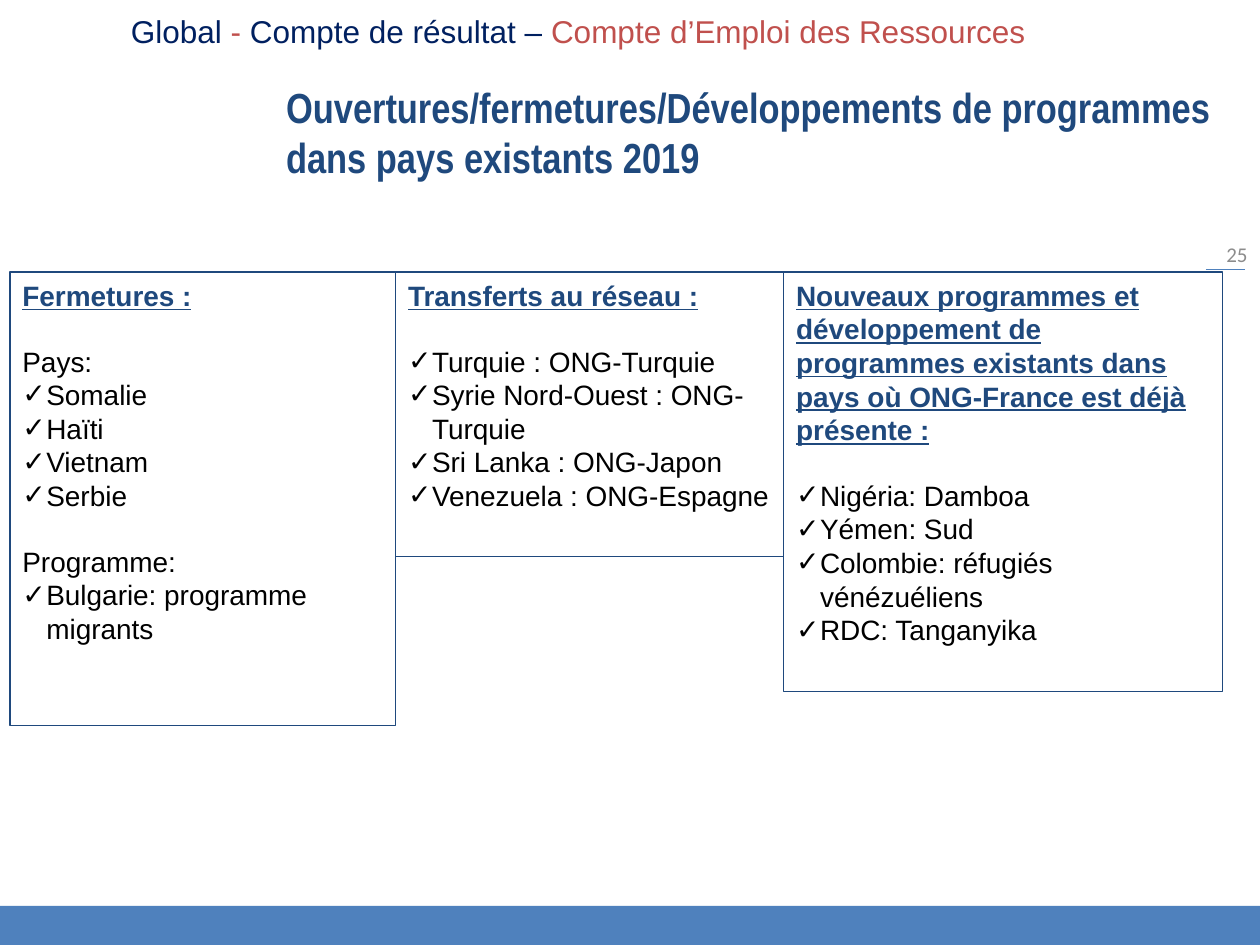
from lxml import etree
from pptx import Presentation
from pptx.dml.color import RGBColor
from pptx.enum.shapes import MSO_CONNECTOR, MSO_SHAPE
from pptx.enum.text import MSO_ANCHOR, MSO_AUTO_SIZE, PP_ALIGN
from pptx.oxml.ns import qn
from pptx.util import Inches, Pt

LEFT, RIGHT = PP_ALIGN.LEFT, PP_ALIGN.RIGHT
TOP, MIDDLE = MSO_ANCHOR.TOP, MSO_ANCHOR.MIDDLE
NAVY, BLUE, DARK, RED = "1F497D", "4F81BD", "002060", "C0504D"
BLACK, GREY, WHITE = "000000", "8C8C8C", "FFFFFF"

W, H = 10, 7.5
FOOTER_H = 0.31
COLUMNS_LEFT, COLUMNS_TOP = 0.08, 2.16
LINE_GAP = 18.4  # one line of 16 pt text
INDENT = 0.19

TITLE = "Ouvertures/fermetures/Développements de programmes dans pays existants 2019"
BREADCRUMB = [("Global", DARK), (" - ", RED), ("Compte de résultat – ", DARK),
              ("Compte d’Emploi des Ressources", RED)]
PAGE = "25"

# width, height, heading, groups of (label, bulleted items)
COLUMNS = [
    (3.06, 3.6, "Fermetures :",
     [("Pays:", ["Somalie", "Haïti", "Vietnam", "Serbie"]),
      ("Programme:", ["Bulgarie: programme migrants"])]),
    (3.08, 2.26, "Transferts au réseau :",
     [(None, ["Turquie : ONG-Turquie", "Syrie Nord-Ouest : ONG-Turquie",
              "Sri Lanka : ONG-Japon", "Venezuela : ONG-Espagne"])]),
    (3.48, 3.33, "Nouveaux programmes et développement de programmes existants "
     "dans pays où ONG-France est déjà présente :",
     [(None, ["Nigéria: Damboa", "Yémen: Sud",
              "Colombie: réfugiés vénézuéliens", "RDC: Tanganyika"])]),
]


def rgb(color):
    return RGBColor.from_string(color)


def add_run(p, text, size, color, font="Arial", bold=False, underline=False):
    r = p.add_run()
    r.text = text
    f = r.font
    f.name, f.size, f.bold, f.underline = font, Pt(size), bold, underline
    f.color.rgb = rgb(color)


def prepare(s, anchor=TOP):
    """Set up the text frame of a shape and return its first paragraph."""
    tf = s.text_frame
    tf.word_wrap = True
    tf.auto_size = MSO_AUTO_SIZE.NONE
    tf.vertical_anchor = anchor
    p = tf.paragraphs[0]
    p.alignment = LEFT
    return p


def add_text_box(slide, x, y, w, h, anchor=TOP):
    return prepare(slide.shapes.add_textbox(Inches(x), Inches(y), Inches(w), Inches(h)), anchor)


def add_rect(slide, x, y, w, h):
    s = slide.shapes.add_shape(MSO_SHAPE.RECTANGLE, Inches(x), Inches(y), Inches(w), Inches(h))
    s.shadow.inherit = False
    return s


def add_check(p):
    pPr = p._p.get_or_add_pPr()
    pPr.set("marL", str(Inches(INDENT)))
    pPr.set("indent", str(-Inches(INDENT)))
    etree.SubElement(pPr, qn("a:buFont"), typeface="Arial")
    etree.SubElement(pPr, qn("a:buChar"), char="✓")


def add_column(slide, x, width, height, heading, groups):
    s = add_rect(slide, x, COLUMNS_TOP, width, height)
    s.fill.background()
    s.line.color.rgb = rgb(NAVY)
    s.line.width = Pt(0.75)
    add_run(prepare(s), heading, 16, NAVY, bold=True, underline=True)
    for label, items in groups:
        rows = ([(label, False)] if label else []) + [(item, True) for item in items]
        for i, (text, checked) in enumerate(rows):
            p = s.text_frame.add_paragraph()
            p.alignment = LEFT
            if i == 0:
                p.space_before = Pt(LINE_GAP)
            if checked:
                add_check(p)
            add_run(p, text, 16, BLACK)


def main():
    prs = Presentation()
    prs.slide_width, prs.slide_height = Inches(W), Inches(H)
    slide = prs.slides.add_slide(prs.slide_layouts[5])

    rule = slide.shapes.add_connector(MSO_CONNECTOR.STRAIGHT, Inches(9.57), Inches(2.14),
                                      Inches(9.88), Inches(2.14))
    rule.line.color.rgb = rgb(BLUE)
    rule.line.width = Pt(1)
    etree.SubElement(rule._element.spPr, qn("a:effectLst"))

    footer = add_rect(slide, 0, H - FOOTER_H, W, FOOTER_H)
    footer.fill.solid()
    footer.fill.fore_color.rgb = rgb(BLUE)
    footer.line.fill.background()

    title = slide.shapes.title
    title.left, title.top = Inches(2.17), Inches(0.61)
    title.width, title.height = Inches(W - 2.17), Inches(0.87)
    title.fill.solid()
    title.fill.fore_color.rgb = rgb(WHITE)
    add_run(prepare(title, MIDDLE), TITLE, 24, NAVY, "Arial Narrow", bold=True)

    p = add_text_box(slide, W - 1.22, 1.86, 1.22, 0.31, MIDDLE)
    p.alignment = RIGHT
    add_run(p, PAGE, 12, GREY, "Calibri")

    x = COLUMNS_LEFT
    for width, height, heading, groups in COLUMNS:
        add_column(slide, x, width, height, heading, groups)
        x += width

    p = add_text_box(slide, 0.94, 0.05, W - 0.94, 0.4)
    for text, color in BREADCRUMB:
        add_run(p, text, 18, color)

    prs.save("out.pptx")


if __name__ == "__main__":
    main()
